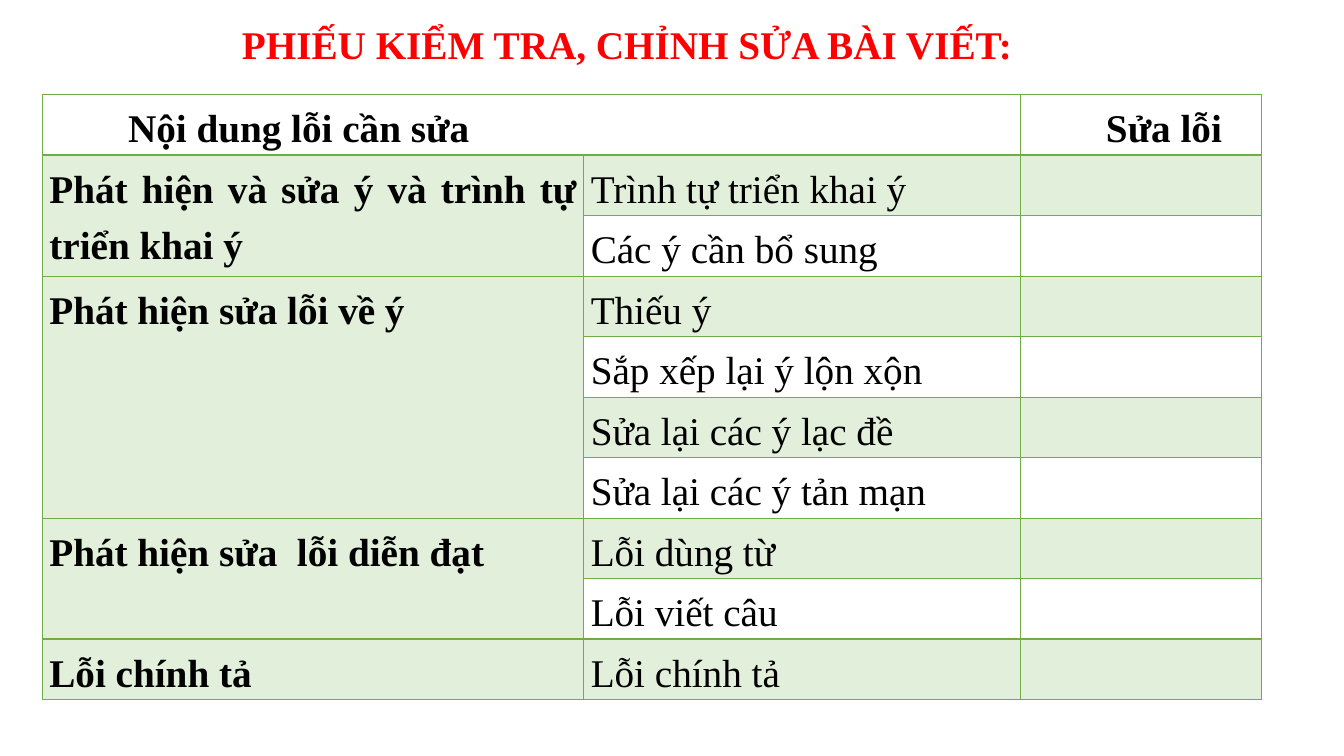
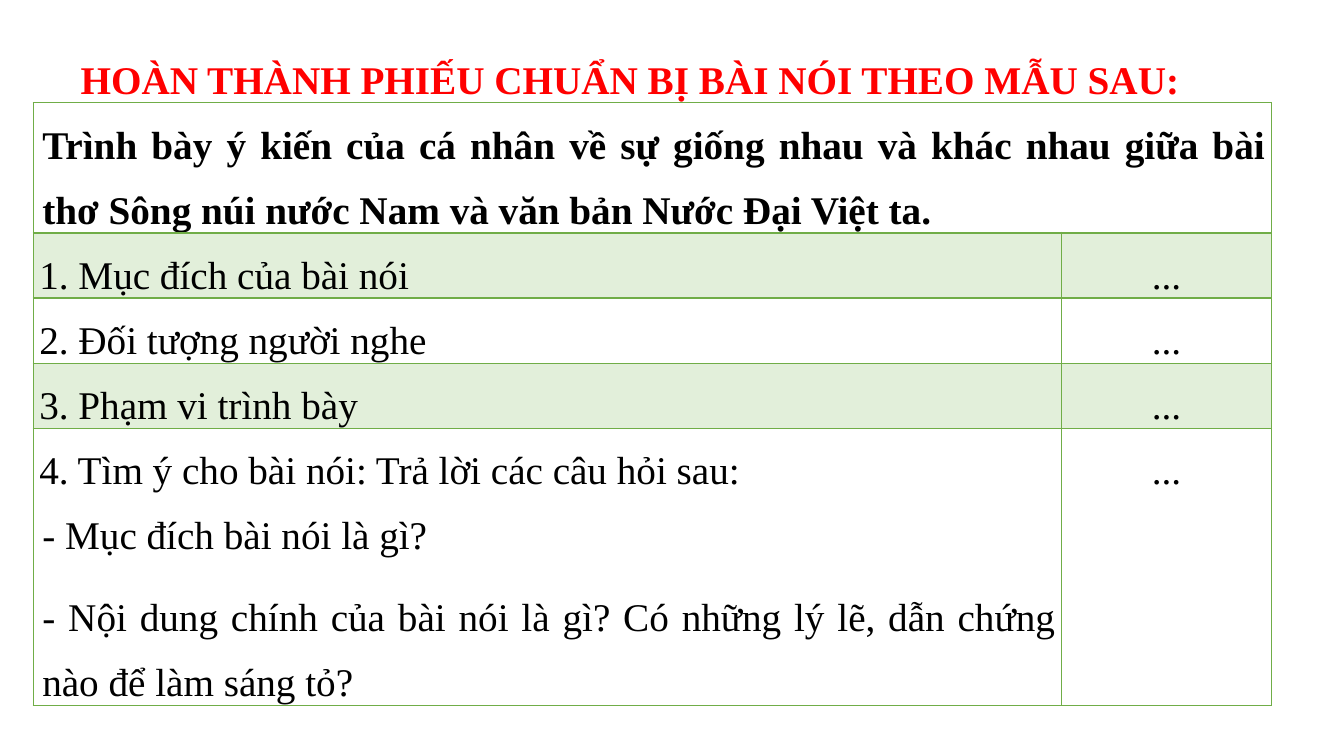
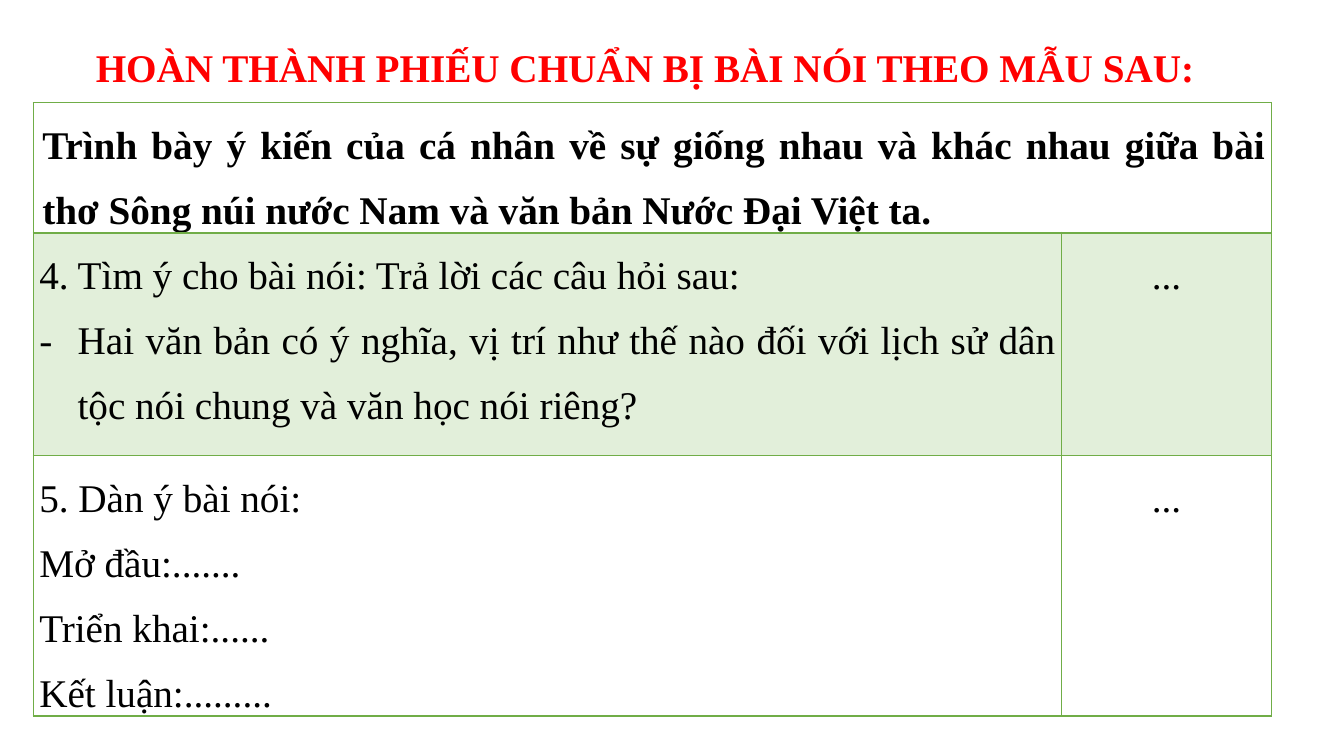
from lxml.etree import SubElement
from pptx import Presentation
from pptx.dml.color import RGBColor
from pptx.enum.text import MSO_ANCHOR, MSO_AUTO_SIZE, PP_ALIGN as AL
from pptx.oxml.ns import qn
from pptx.util import Inches, Pt

FONT = "Times New Roman"
SIZE = Pt(28)
COLORS = {"title": "FF0000", "text": "000000", "line": "70AD47", "band": "E2EFDA"}

STYLES = {
    "plain": {},
    "bold": {"bold": True},
    "bold_just": {"bold": True, "align": AL.JUSTIFY},
    "head": {"bold": True, "indent": 0.78},
    "topic": {"bold": True, "align": AL.JUSTIFY, "left": 0.03, "after": 12},
    "just": {"align": AL.JUSTIFY},
    "dash": {"align": AL.JUSTIFY, "left": 0.03, "after": 12},
    "bullet": {"align": AL.JUSTIFY, "left": 0.38, "indent": -0.38, "after": 12, "bullet": "-"},
    "dots": {"align": AL.CENTER},
}

DOTS = [("dots", "...")]
TOPIC = [("topic", "Trình bày ý kiến của cá nhân về sự giống nhau và khác nhau giữa bài thơ "
                   "Sông núi nước Nam và văn bản Nước Đại Việt ta.")]
IDEAS = ("just", "4. Tìm ý cho bài nói: Trả lời các câu hỏi sau:")
TALK_TITLE = "HOÀN THÀNH PHIẾU CHUẨN BỊ BÀI NÓI THEO MẪU SAU:"
TALK = {"left": 0.33, "top": 1.02, "cols": [10.2, 2.08], "inset": 0.06, "spacing": 1.5,
        "merges": [(0, 0, 0, 1)]}

CHECKLIST = [
    (("bold_just", "Phát hiện và sửa ý và trình tự triển khai ý"),
     ["Trình tự triển khai ý", "Các ý cần bổ sung"]),
    (("bold", "Phát hiện sửa lỗi về ý"),
     ["Thiếu ý", "Sắp xếp lại ý lộn xộn", "Sửa lại các ý lạc đề", "Sửa lại các ý tản mạn"]),
    (("bold", "Phát hiện sửa  lỗi diễn đạt"), ["Lỗi dùng từ", "Lỗi viết câu"]),
    (("bold", "Lỗi chính tả"), ["Lỗi chính tả"]),
]


def checklist_table():
    rows = [[[("head", "Nội dung lỗi cần sửa")], [], [("head", "Sửa lỗi")]]]
    merges = [(0, 0, 0, 1)]
    for group, errors in CHECKLIST:
        first = len(rows)
        for i, error in enumerate(errors):
            rows.append([[] if i else [group], [("plain", error)], []])
        if len(errors) > 1:
            merges.append((first, 0, len(rows) - 1, 0))
    return {"left": 0.42, "top": 0.94, "cols": [5.37, 4.33, 2.39], "inset": 0.07, "spacing": 1.3,
            "merges": merges, "heights": [0.6] * len(rows), "rows": rows}


SLIDES = [
    {"title": "PHIẾU KIỂM TRA, CHỈNH SỬA BÀI VIẾT:", "at": (2.3, 0.15, 7.92, 0.57),
     "align": AL.LEFT, "spacing": 1.0, "table": checklist_table()},
    {"title": TALK_TITLE, "at": (0.7, 0.36, 11.21, 0.66), "align": AL.JUSTIFY, "spacing": 1.3,
     "table": {**TALK, "heights": [1.29, 0.64, 0.64, 0.64, 2.75], "rows": [
         [TOPIC, []],
         [[("just", "1. Mục đích của bài nói")], DOTS],
         [[("just", "2. Đối tượng người nghe")], DOTS],
         [[("just", "3. Phạm vi trình bày")], DOTS],
         [[IDEAS,
           ("dash", "- Mục đích bài nói là gì?"),
           ("dash", "- Nội dung chính của bài nói là gì? Có những lý lẽ, dẫn chứng nào "
                    "để làm sáng tỏ?")], DOTS],
     ]}},
    {"title": TALK_TITLE, "at": (0.85, 0.24, 11.21, 0.66), "align": AL.JUSTIFY, "spacing": 1.3,
     "table": {**TALK, "heights": [1.29, 2.21, 2.58], "rows": [
         [TOPIC, []],
         [[IDEAS,
           ("bullet", "Hai văn bản có ý nghĩa, vị trí như thế nào đối với lịch sử dân tộc "
                      "nói chung và văn học nói riêng?")], DOTS],
         [[("just", "5. Dàn ý bài nói:"), ("just", "Mở đầu:......."),
           ("just", "Triển khai:......"), ("just", "Kết luận:.........")], DOTS],
     ]}},
]


def add_run(p, text, color, bold):
    r = p.add_run()
    r.text = text
    r.font.name, r.font.size, r.font.bold = FONT, SIZE, bold
    r.font.color.rgb = RGBColor.from_string(COLORS[color])


def add_title(s, data):
    sp = s.shapes.title
    sp.left, sp.top, sp.width, sp.height = map(Inches, data["at"])
    tf = sp.text_frame
    tf.word_wrap = True
    tf.auto_size = MSO_AUTO_SIZE.NONE
    tf.vertical_anchor = MSO_ANCHOR.TOP
    p = tf.paragraphs[0]
    p.alignment, p.line_spacing = data["align"], data["spacing"]
    add_run(p, data["title"], "title", True)


def fill_text(cell, paragraphs, spacing):
    tf = cell.text_frame
    for i, (kind, text) in enumerate(paragraphs):
        style = STYLES[kind]
        p = tf.add_paragraph() if i else tf.paragraphs[0]
        p.alignment = style.get("align", AL.LEFT)
        p.line_spacing = spacing
        p.space_after = Pt(style.get("after", 0))
        pPr = p._p.get_or_add_pPr()
        pPr.set("marL", str(Inches(style.get("left", 0))))
        pPr.set("indent", str(Inches(style.get("indent", 0))))
        if "bullet" in style:
            SubElement(pPr, qn("a:buFont")).set("typeface", FONT)
            SubElement(pPr, qn("a:buChar")).set("char", style["bullet"])
        add_run(p, text, "text", style.get("bold", False))


def set_borders(cell, row):
    tcPr = cell._tc.get_or_add_tcPr()
    widths = {"L": 1, "R": 1, "T": 2 if row == 1 else 1, "B": 2 if row == 0 else 1}
    for side, width in widths.items():
        ln = SubElement(tcPr, qn("a:ln" + side), w=str(Pt(width)))
        SubElement(SubElement(ln, qn("a:solidFill")), qn("a:srgbClr"), val=COLORS["line"])


def add_grid(s, data):
    rows, cols, heights = data["rows"], data["cols"], data["heights"]
    table = s.shapes.add_table(len(rows), len(cols), Inches(data["left"]), Inches(data["top"]),
                               Inches(sum(cols)), Inches(sum(heights))).table
    table.first_row = table.horz_banding = False
    for col, width in zip(table.columns, cols):
        col.width = Inches(width)
    for row, height in zip(table.rows, heights):
        row.height = Inches(height)
    for r, row in enumerate(rows):
        for c, paragraphs in enumerate(row):
            cell = table.cell(r, c)
            cell.margin_left = cell.margin_right = Inches(data["inset"])
            cell.margin_top = cell.margin_bottom = 0
            set_borders(cell, r)
            if r % 2:
                cell.fill.solid()
                cell.fill.fore_color.rgb = RGBColor.from_string(COLORS["band"])
            else:
                cell.fill.background()
            fill_text(cell, paragraphs, data["spacing"])
    for r1, c1, r2, c2 in data["merges"]:
        table.cell(r1, c1).merge(table.cell(r2, c2))


def main():
    prs = Presentation()
    prs.slide_width, prs.slide_height = Inches(13.33), Inches(7.5)
    for data in SLIDES:
        s = prs.slides.add_slide(prs.slide_layouts[5])
        add_title(s, data)
        add_grid(s, data["table"])
    prs.save("out.pptx")


if __name__ == "__main__":
    main()
